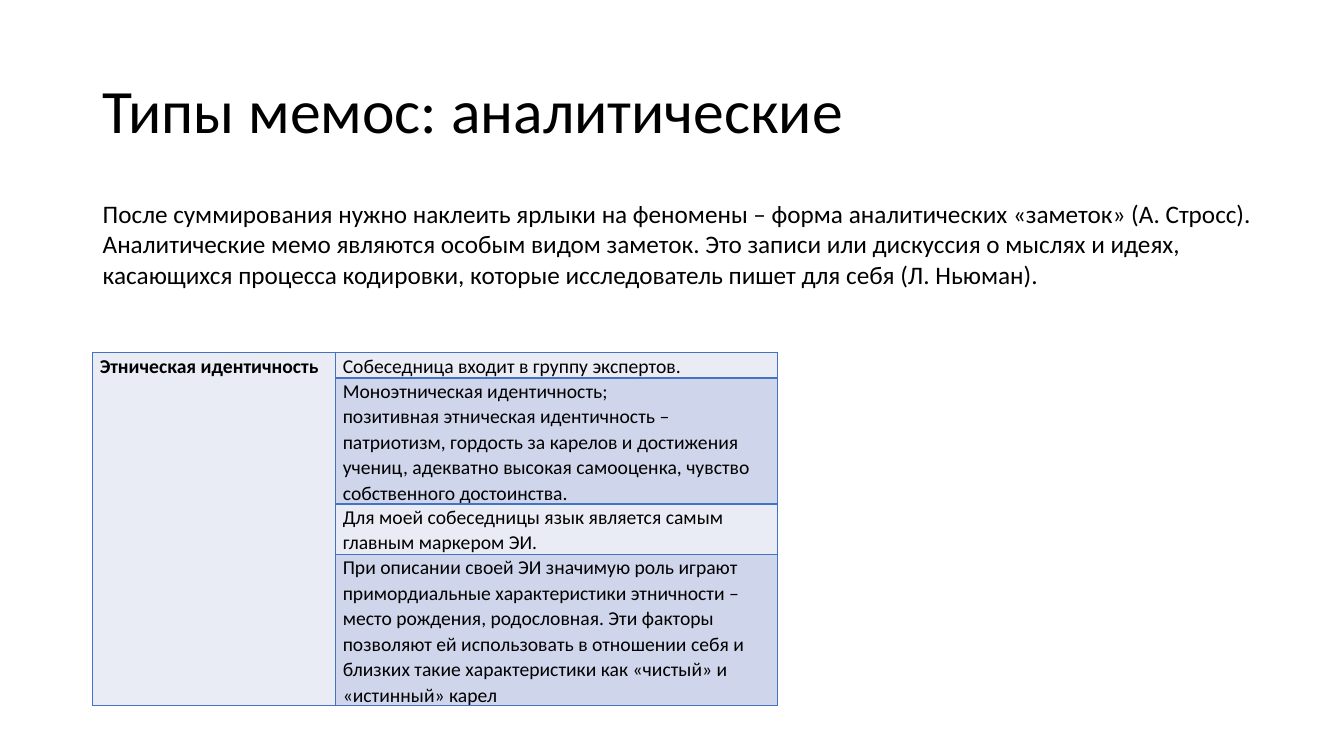
import pptx
import pptx.util
import pptx.dml.color
import pptx.enum.text
import pptx.oxml
import pptx.oxml.ns

Inches, Pt = pptx.util.Inches, pptx.util.Pt
RGBColor = pptx.dml.color.RGBColor
Anchor = pptx.enum.text.MSO_ANCHOR

# Content
TITLE = "Типы мемос: аналитические"
INTRO = [
    "После суммирования нужно наклеить ярлыки на феномены – форма аналитических «заметок» (А. Стросс).",
    "Аналитические мемо являются особым видом заметок. Это записи или дискуссия о мыслях и идеях, "
    "касающихся процесса кодировки, которые исследователь пишет для себя (Л. Ньюман).",
]
TOPIC = "Этническая идентичность"
# Each memo: its text lines on the slide, its paragraphs
MEMOS = [
    (1, ["Собеседница входит в группу экспертов."]),
    (5, ["Моноэтническая идентичность;",
         "позитивная этническая идентичность – патриотизм, гордость за карелов и достижения учениц, "
         "адекватно высокая самооценка, чувство собственного достоинства."]),
    (2, ["Для моей собеседницы язык является самым главным маркером ЭИ."]),
    (6, ["При описании своей ЭИ значимую роль играют примордиальные характеристики этничности – "
         "место рождения, родословная. Эти факторы позволяют ей использовать в отношении себя и "
         "близких такие характеристики как «чистый» и «истинный» карел"]),
]

# Style and grid
FONT = "Calibri"
BLACK = RGBColor(0x00, 0x00, 0x00)
BLUE = RGBColor(0x44, 0x72, 0xC4)
BANDS = [RGBColor(0xE9, 0xEB, 0xF5), RGBColor(0xCF, 0xD5, 0xEA)]
WIDE, HIGH = 13.33, 7.5
LEFT = 0.92
COLS = [2.41, 4.38]
LINE = 0.25


def write(frame, texts, size, space=1.0, bold=False):
    frame.word_wrap = True
    frame.text = "\n".join(texts)
    for para in frame.paragraphs:
        para.alignment = pptx.enum.text.PP_ALIGN.LEFT
        para.line_spacing = space
        font = para.font
        font.name, font.size, font.bold = FONT, Pt(size), bold
        font.color.rgb = BLACK


def border(cell):
    props = cell._tc.get_or_add_tcPr()
    for side in "LRTB":
        props.append(pptx.oxml.parse_xml(
            f'<a:ln{side} {pptx.oxml.ns.nsdecls("a")} w="{Pt(1)}"><a:solidFill>'
            f'<a:srgbClr val="{BLUE}"/></a:solidFill></a:ln{side}>'))


def main():
    deck = pptx.Presentation()
    deck.slide_width, deck.slide_height = Inches(WIDE), Inches(HIGH)
    slide = deck.slides.add_slide(deck.slide_layouts[5])

    # Title
    title = slide.shapes.title
    title.left, title.top = Inches(LEFT), Inches(0.4)
    title.width, title.height = Inches(WIDE - 2 * LEFT), Inches(1.45)
    title.text_frame.vertical_anchor = Anchor.MIDDLE
    write(title.text_frame, [TITLE], 44, 0.9)

    # Introduction
    intro = slide.shapes.add_textbox(
        Inches(LEFT), Inches(1.92), Inches(11.68), Inches(1.01))
    write(intro.text_frame, INTRO, 18)

    # Table of memos
    total = LINE * sum(count for count, _ in MEMOS)
    table = slide.shapes.add_table(
        len(MEMOS), len(COLS), Inches(LEFT), Inches(3.5),
        Inches(sum(COLS)), Inches(total)).table
    table.first_row = False
    for col, width in zip(table.columns, COLS):
        col.width = Inches(width)
    for i, (count, texts) in enumerate(MEMOS):
        table.rows[i].height = Inches(LINE * count)
        write(table.cell(i, 1).text_frame, texts, 14, 1.07)
        for j in range(len(COLS)):
            cell = table.cell(i, j)
            cell.margin_left = cell.margin_right = Inches(0.07)
            cell.margin_top = cell.margin_bottom = 0
            border(cell)
            cell.fill.solid()
            cell.fill.fore_color.rgb = BANDS[i % 2 if j else 0]
            if j == 0:
                write(cell.text_frame, [TOPIC] if i == 0 else [""], 14, 1.07, True)
    table.cell(0, 0).merge(table.cell(len(MEMOS) - 1, 0))

    deck.save("out.pptx")


if __name__ == "__main__":
    main()
